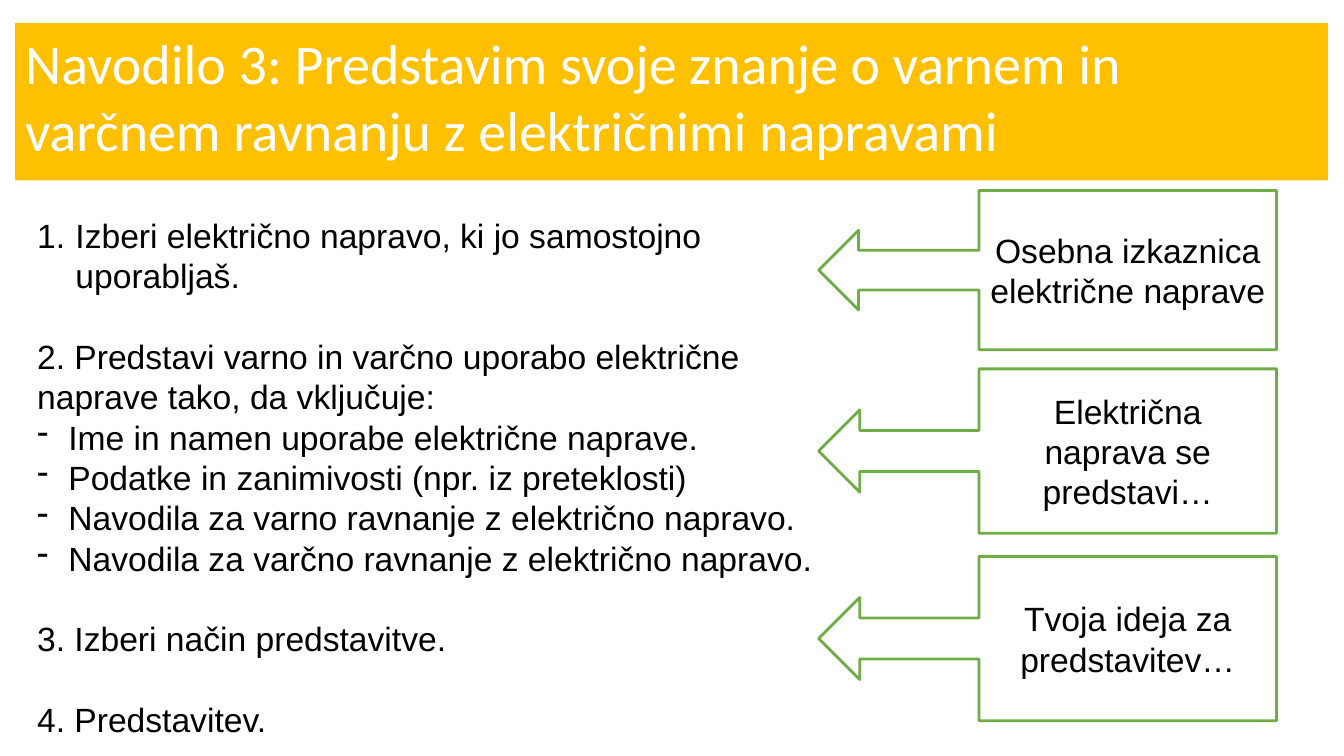
from dataclasses import dataclass

from lxml.etree import SubElement
from pptx import Presentation
from pptx.dml.color import RGBColor
from pptx.enum.shapes import MSO_SHAPE
from pptx.enum.text import MSO_ANCHOR, PP_ALIGN
from pptx.oxml.ns import qn
from pptx.util import Inches, Pt


@dataclass(frozen=True)
class Theme:
    title_fill: RGBColor = RGBColor(0xFF, 0xC0, 0x00)
    outline: RGBColor = RGBColor(0x70, 0xAD, 0x47)
    white: RGBColor = RGBColor(0xFF, 0xFF, 0xFF)
    black: RGBColor = RGBColor(0x00, 0x00, 0x00)
    title_font: str = "Calibri"
    body_font: str = "Arial"
    title_size: int = 40
    body_size: int = 24
    section_gap: int = 29
    outline_width: int = 2


@dataclass(frozen=True)
class Step:
    text: str
    indent: float = 0
    bullet: str = ""
    starts_section: bool = False


@dataclass(frozen=True)
class Callout:
    text: str
    top: float
    height: float


THEME = Theme()
TITLE = "Navodilo 3: Predstavim svoje znanje o varnem in varčnem ravnanju z električnimi napravami"
STEPS = [
    Step("Izberi električno napravo, ki jo samostojno uporabljaš.", 0.38, "1."),
    Step("2. Predstavi varno in varčno uporabo električne naprave tako, da vključuje:",
         starts_section=True),
    Step("Ime in namen uporabe električne naprave.", 0.31, "-"),
    Step("Podatke in zanimivosti (npr. iz preteklosti)", 0.31, "-"),
    Step("Navodila za varno ravnanje z električno napravo.", 0.31, "-"),
    Step("Navodila za varčno ravnanje z električno napravo.", 0.31, "-"),
    Step("3. Izberi način predstavitve.", starts_section=True),
    Step("4. Predstavitev.", starts_section=True),
]
CALLOUTS = [
    Callout("Osebna izkaznica električne naprave", 1.89, 1.58),
    Callout("Električna naprava se predstavi…", 3.66, 1.63),
    Callout("Tvoja ideja za predstavitev…", 5.52, 1.63),
]


def style_text(paragraph, font: str, size: int, color: RGBColor) -> None:
    paragraph.font.name = font
    paragraph.font.size = Pt(size)
    paragraph.font.color.rgb = color


def set_bullet(paragraph, step: Step) -> None:
    properties = paragraph._p.get_or_add_pPr()
    properties.set("marL", str(Inches(step.indent)))
    properties.set("indent", str(-Inches(step.indent)))
    if step.bullet == "1.":
        SubElement(properties, qn("a:buAutoNum"), type="arabicPeriod")
    else:
        SubElement(properties, qn("a:buChar"), char=step.bullet)


def add_title(slide) -> None:
    title = slide.shapes.title
    title.left, title.top = Inches(0.15), Inches(0.23)
    title.width, title.height = Inches(13.02), Inches(1.56)
    title.fill.solid()
    title.fill.fore_color.rgb = THEME.title_fill
    title.text_frame.text = TITLE
    title.text_frame.word_wrap = True
    title.text_frame.vertical_anchor = MSO_ANCHOR.TOP
    paragraph = title.text_frame.paragraphs[0]
    paragraph.alignment = PP_ALIGN.LEFT
    style_text(paragraph, THEME.title_font, THEME.title_size, THEME.white)


def add_steps(slide, steps: list[Step]) -> None:
    box = slide.shapes.add_textbox(Inches(0.27), Inches(2.08), Inches(8.05), Inches(6.4))
    frame = box.text_frame
    frame.word_wrap = True
    for index, step in enumerate(steps):
        paragraph = frame.add_paragraph() if index else frame.paragraphs[0]
        paragraph.text = step.text
        style_text(paragraph, THEME.body_font, THEME.body_size, THEME.black)
        if step.starts_section:
            paragraph.space_before = Pt(THEME.section_gap)
        if step.bullet:
            set_bullet(paragraph, step)


def add_callout(slide, callout: Callout) -> None:
    shape = slide.shapes.add_shape(
        MSO_SHAPE.LEFT_ARROW_CALLOUT,
        Inches(8.12), Inches(callout.top), Inches(4.54), Inches(callout.height))
    shape.shadow.inherit = False
    shape.fill.solid()
    shape.fill.fore_color.rgb = THEME.white
    shape.line.color.rgb = THEME.outline
    shape.line.width = Pt(THEME.outline_width)
    shape.text_frame.text = callout.text
    shape.text_frame.word_wrap = True
    shape.text_frame.vertical_anchor = MSO_ANCHOR.MIDDLE
    paragraph = shape.text_frame.paragraphs[0]
    paragraph.alignment = PP_ALIGN.CENTER
    style_text(paragraph, THEME.body_font, THEME.body_size, THEME.black)


def main() -> None:
    presentation = Presentation()
    presentation.slide_width = Inches(13.33)
    presentation.slide_height = Inches(7.5)
    slide = presentation.slides.add_slide(presentation.slide_layouts[5])

    # Heading band
    add_title(slide)

    # Instructions on the left
    add_steps(slide, STEPS)

    # Callouts pointing at the instructions
    for callout in CALLOUTS:
        add_callout(slide, callout)

    presentation.save("out.pptx")


if __name__ == "__main__":
    main()
